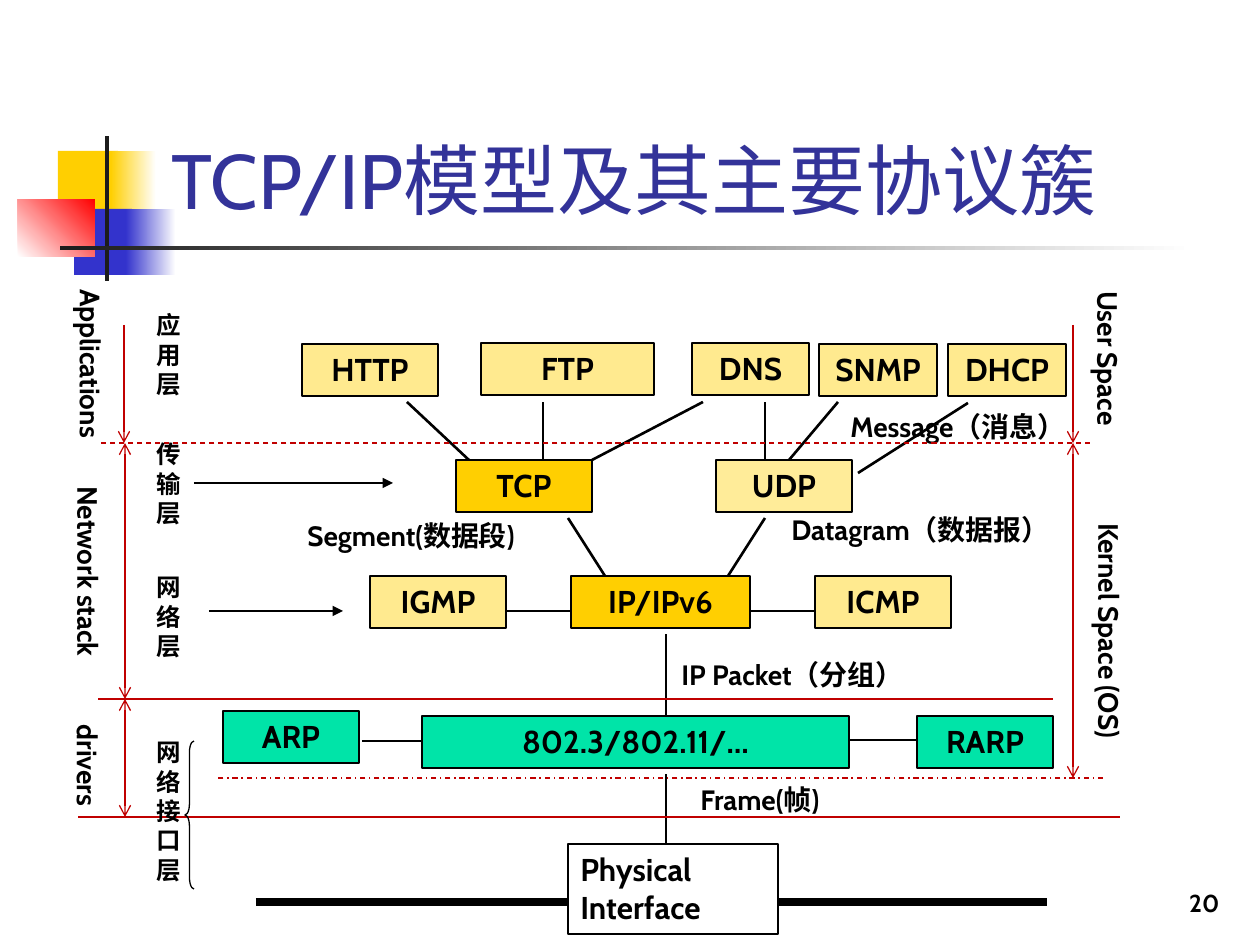
from lxml import etree
from pptx import Presentation
from pptx import util as u
from pptx.dml.color import RGBColor
from pptx.enum import dml, shapes, text
from pptx.oxml.ns import qn

PX = 914400 / 126
FONT = "Cabin"
HEX = {
    "ink": "000000", "white": "FFFFFF", "title": "333399", "red": "C00000",
    "gold": "FFCF01", "cream": "FFEA8F", "pale": "FFEC99", "green": "00E4A8",
    "blue": "3333CC", "bright": "FF0000", "dark": "1C1C1C",
}
TITLE = "TCP/IP模型及其主要协议簇"

# Decoration: left, top, width, height, colours, angle
DECOR = [
    (58, 151, 60, 66, ["gold"], 0),
    (111, 151, 45, 66, ["gold", "white"], 0),
    (74, 209, 58, 66, ["blue"], 0),
    (126, 209, 50, 66, ["blue", "white"], 0),
    (18, 199, 77, 58, ["white", "bright"], 45),
    (105, 136, 4, 145, ["dark"], 0),
    (60, 246, 1134, 4, ["dark", "white"], 0),
]

# Protocol boxes: name, left, top, width, fill
BOX_H = 52
BOXES = [
    ("HTTP", 302, 344, 136, "cream"), ("FTP", 481, 343, 173, "cream"),
    ("DNS", 692, 343, 117, "cream"), ("SNMP", 819, 344, 118, "cream"),
    ("DHCP", 948, 344, 118, "cream"),
    ("TCP", 456, 460, 136, "gold"), ("UDP", 716, 460, 136, "pale"),
    ("IGMP", 370, 576, 136, "cream"), ("IP/IPv6", 571, 576, 179, "gold"),
    ("ICMP", 815, 576, 136, "cream"),
    ("ARP", 223, 711, 136, "green"), ("802.3/802.11/…", 422, 716, 427, "green"),
    ("RARP", 917, 716, 136, "green"),
]

# Links between boxes: x1, y1, x2, y2
LINKS = [
    (469, 460, 407, 402), (543, 460, 543, 402), (592, 460, 703, 402),
    (765, 460, 765, 402), (789, 460, 838, 402), (858, 473, 968, 403),
    (605, 576, 568, 518), (728, 576, 765, 518),
    (592, 611, 505, 611), (728, 611, 815, 611),
    (666, 716, 666, 634), (362, 741, 423, 741), (844, 740, 917, 740),
    (666, 902, 666, 774),
]
BUS = (256, 902, 1047, 902)

# Borders between spaces: ends, dash
BORDERS = [
    ((1090, 443, 98, 443), dml.MSO_LINE.DASH),
    ((1053, 699, 98, 699), None),
    ((1120, 817, 78, 817), None),
    ((1103, 778, 217, 778), dml.MSO_LINE.DASH_DOT),
]

# Span arrows: x, top, bottom, head
SPANS = [
    (124, 325, 443, None), (125, 443, 699, "arrow"), (125, 699, 817, "arrow"),
    (1073, 325, 443, None), (1073, 443, 778, "arrow"),
]
HINTS = [(194, 483, 393, 483), (209, 611, 343, 611)]

# Labels: words, left, top, width
LABEL_H = 47
UNITS = [
    ("Message（消息）", 838, 403, 271), ("Segment(数据段)", 295, 512, 256),
    ("Datagram（数据报）", 779, 506, 354), ("IP Packet（分组）", 669, 651, 281),
    ("Frame(帧)", 688, 776, 168),
]
SIDES = [
    ("Applications", -9, 340, 199), ("Network stack", -40, 548, 256),
    ("drivers", 24, 742, 127), ("User Space", 994, 335, 228),
    ("Kernel Space (OS)", 922, 607, 374),
]
# Layers: words, top, width, height
LAYERS = [
    ("应用层", 304, 66, 102), ("传输层", 433, 50, 101),
    ("网络层", 566, 66, 102), ("网络接口层", 731, 42, 159),
]

prs = Presentation()
prs.slide_width, prs.slide_height = u.Inches(10), u.Inches(7.5)
slide = prs.slides.add_slide(prs.slide_layouts[5])
art = slide.shapes


def emu(*vals):
    return [round(v * PX) for v in vals]


def rgb(name):
    return RGBColor.from_string(HEX[name])


def write(shape, words, size, align=text.PP_ALIGN.LEFT, bold=True,
          color="ink", anchor=text.MSO_ANCHOR.TOP):
    frame = shape.text_frame
    frame.text = words
    frame.word_wrap = True
    frame.auto_size = text.MSO_AUTO_SIZE.NONE
    frame.vertical_anchor = anchor
    para = frame.paragraphs[0]
    para.alignment = align
    font = para.font
    font.name, font.size, font.bold = FONT, u.Pt(size), bold
    font.color.rgb = rgb(color)


def label(words, at, size, **style):
    box = art.add_textbox(*emu(*at))
    write(box, words, size, **style)
    return box


def block(at, fills, angle=0, edge=False, kind=shapes.MSO_SHAPE.RECTANGLE):
    shape = art.add_shape(kind, *emu(*at))
    shape.shadow.inherit = False
    if not fills:
        shape.fill.background()
    elif len(fills) == 1:
        shape.fill.solid()
        shape.fill.fore_color.rgb = rgb(fills[0])
    else:
        shape.fill.gradient()
        shape.fill.gradient_angle = angle
        for stop, name in zip(shape.fill.gradient_stops, fills):
            stop.color.rgb = rgb(name)
    if edge:
        shape.line.color.rgb = rgb("ink")
        shape.line.width = u.Pt(0.75)
    else:
        shape.line.fill.background()
    return shape


def rule(ends, color="ink", width=0.75, dash=None, head=None, tail=None):
    wire = art.add_connector(shapes.MSO_CONNECTOR.STRAIGHT, *emu(*ends))
    wire.line.color.rgb = rgb(color)
    wire.line.width = u.Pt(width)
    if dash:
        wire.line.dash_style = dash
    ln = wire.line._get_or_add_ln()
    for tag, end in (("a:headEnd", head), ("a:tailEnd", tail)):
        if end:
            etree.SubElement(ln, qn(tag), type=end)
    etree.SubElement(ln.getparent(), qn("a:effectLst"))


# Decoration and title
for *at, fills, angle in DECOR:
    block(at, fills, angle)
head = art.title
head.left, head.top, head.width, head.height = emu(159, 29, 1074, 202)
write(head, TITLE, 44, bold=False, color="title", anchor=text.MSO_ANCHOR.BOTTOM)

# Links and boxes
rule(BUS, width=5)
for ends in LINKS:
    rule(ends, width=1.5)
for name, x, y, w, fill in BOXES:
    write(block((x, y, w, BOX_H), [fill], edge=True), name, 18,
          align=text.PP_ALIGN.CENTER)
write(block((568, 844, 210, 90), ["white"], edge=True), "Physical Interface", 18)

# Data units
for words, x, y, w in UNITS:
    label(words, (x, y, w, LABEL_H), 16)

# Borders, spans and side labels
for ends, dash in BORDERS:
    rule(ends, "red", dash=dash)
for x, top, base, start in SPANS:
    rule((x, top, x, base), "red", head=start, tail="arrow")
for words, x, y, w in SIDES:
    label(words, (x, y, w, LABEL_H), 16, align=text.PP_ALIGN.CENTER).rotation = 90

# Layer names
brace = block((185, 741, 9, 148), [], edge=True, kind=shapes.MSO_SHAPE.LEFT_BRACE)
brace.adjustments[0] = 1.26
for ends in HINTS:
    rule(ends, tail="triangle")
for words, y, w, h in LAYERS:
    label(words, (144, y, w, h), 14)

# Page number
label("20", (970, 861, 262, 63), 14, align=text.PP_ALIGN.RIGHT,
      anchor=text.MSO_ANCHOR.BOTTOM)

prs.save("out.pptx")
